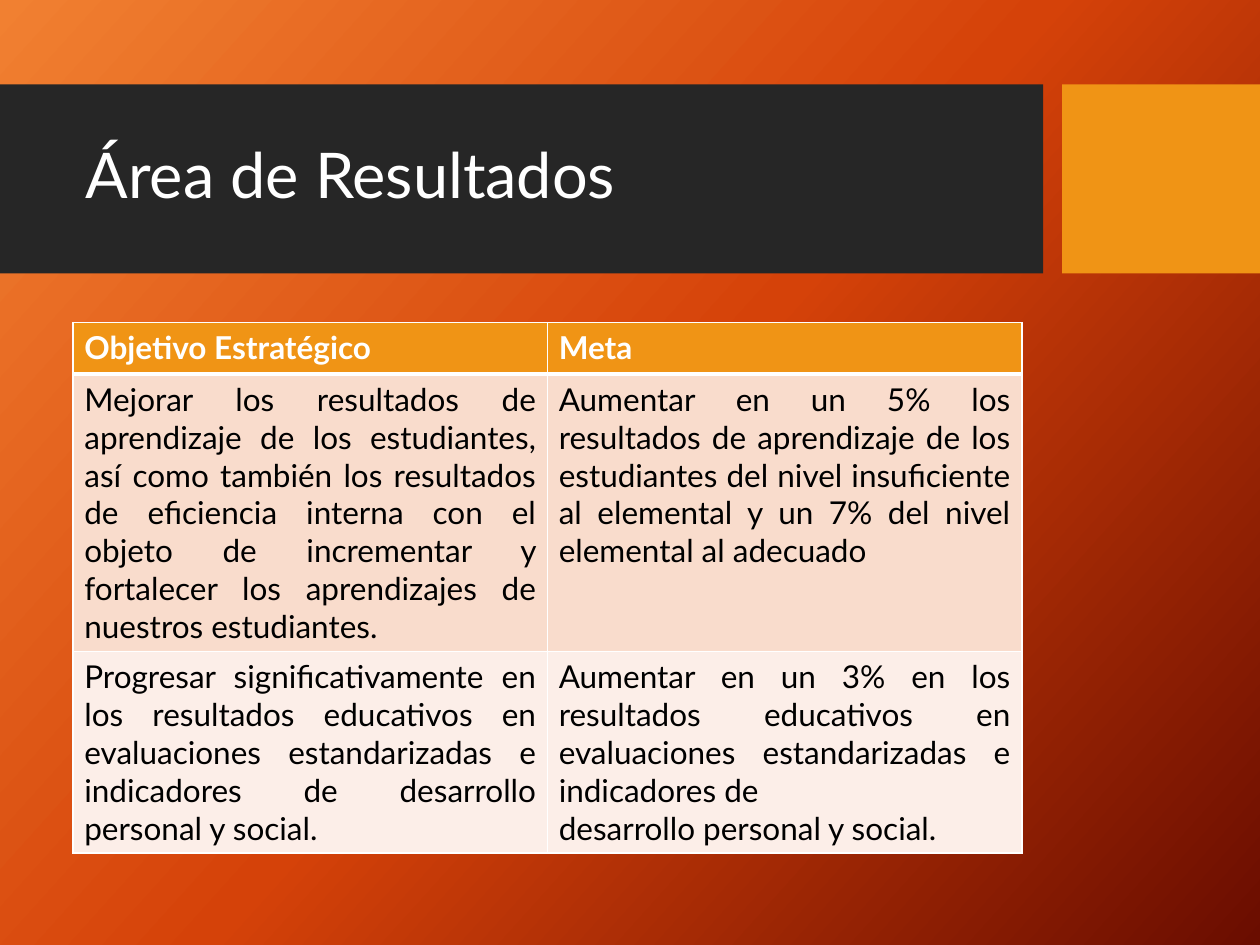
from copy import deepcopy

from lxml import etree
from pptx import Presentation
from pptx.dml.color import RGBColor
from pptx.enum.shapes import MSO_SHAPE
from pptx.enum.text import MSO_ANCHOR, PP_ALIGN
from pptx.oxml.ns import qn
from pptx.util import Inches, Pt

RECT = MSO_SHAPE.RECTANGLE
MIDDLE = MSO_ANCHOR.MIDDLE
LEFT, JUSTIFY = PP_ALIGN.LEFT, PP_ALIGN.JUSTIFY

FONT = "Lato"
WHITE = RGBColor(0xFF, 0xFF, 0xFF)
BLACK = RGBColor(0x00, 0x00, 0x00)
CHARCOAL = RGBColor(0x26, 0x26, 0x26)
AMBER = RGBColor(0xF0, 0x94, 0x15)
PEACH = RGBColor(0xF9, 0xDC, 0xCC)
PALE = RGBColor(0xFC, 0xEE, 0xE8)
BACKGROUND = [
    (0, RGBColor(0xF1, 0x80, 0x31)),
    (0.5, RGBColor(0xD5, 0x42, 0x09)),
    (1, RGBColor(0x6A, 0x0D, 0x00)),
]

ROWS = [
    ("Objetivo Estratégico", "Meta"),
    ("Mejorar los resultados de aprendizaje de los estudiantes, así como "
     "también los resultados de eficiencia interna con el objeto de "
     "incrementar y fortalecer los aprendizajes de nuestros estudiantes.",
     "Aumentar en un 5% los resultados de aprendizaje de los estudiantes del "
     "nivel insuficiente al elemental y un 7% del nivel elemental al adecuado "),
    ("Progresar significativamente en los resultados educativos en "
     "evaluaciones estandarizadas e indicadores de desarrollo personal y "
     "social.",
     "Aumentar en un 3% en los resultados educativos en evaluaciones "
     "estandarizadas e indicadores de\ndesarrollo personal y social."),
]
ROW_HEIGHTS = [0.41, 2.2, 1.6]
ROW_FILLS = [AMBER, PEACH, PALE]


def set_background(s):
    fill = s.background.fill
    fill.gradient()
    fill.gradient_angle = 360 - 42
    # A new gradient has two stops; add the third
    stops = next(s.element.iter(qn("a:gsLst")))
    stops.append(deepcopy(stops[-1]))
    for stop, (position, color) in zip(fill.gradient_stops, BACKGROUND):
        stop.position = position
        stop.color.rgb = color


def add_band(s, left, width, color):
    sp = s.shapes.add_shape(RECT, Inches(left), Inches(0.67),
                            Inches(width), Inches(1.5))
    sp.shadow.inherit = False
    sp.fill.solid()
    sp.fill.fore_color.rgb = color
    sp.line.fill.background()


def format_font(font, size, color, bold=False):
    font.name = FONT
    font.size = Pt(size)
    font.bold = bold
    font.color.rgb = color


def set_title(s, text):
    title = s.shapes.title
    title.left, title.top = Inches(0.58), Inches(0.82)
    title.width, title.height = Inches(7.54), Inches(1.18)
    tf = title.text_frame
    tf.text = text
    tf.vertical_anchor = MIDDLE
    p = tf.paragraphs[0]
    p.alignment = LEFT
    p.line_spacing = 0.9
    format_font(p.runs[0].font, 36, WHITE)
    # Bring the title in front of the bands
    title.element.getparent().append(title.element)


def set_borders(cell, widths):
    tc_pr = cell._tc.get_or_add_tcPr()
    for side, width in zip("LRTB", widths):
        ln = etree.SubElement(tc_pr, qn(f"a:ln{side}"), w=str(Pt(width)))
        fill = etree.SubElement(ln, qn("a:solidFill"))
        etree.SubElement(fill, qn("a:srgbClr"), val=str(WHITE))


def format_cell(cell, row, col, text):
    header = row == 0
    # The rule under the header is thicker
    set_borders(cell, (1, 1, 3 if row == 1 else 1, 3 if header else 1))
    cell.fill.solid()
    cell.fill.fore_color.rgb = ROW_FILLS[row]
    cell.margin_left = cell.margin_right = Inches(0.09)
    cell.margin_top = cell.margin_bottom = Inches(0.05)
    cell.text_frame.text = text
    for p in cell.text_frame.paragraphs:
        p.alignment = LEFT if header and col == 0 else JUSTIFY
        for r in p.runs:
            format_font(r.font, 18, WHITE if header else BLACK, header)


def add_goals_table(s):
    table = s.shapes.add_table(
        len(ROWS), len(ROWS[0]), Inches(0.58), Inches(2.56),
        Inches(7.53), Inches(sum(ROW_HEIGHTS))).table
    for row, texts in enumerate(ROWS):
        table.rows[row].height = Inches(ROW_HEIGHTS[row])
        for col, text in enumerate(texts):
            format_cell(table.cell(row, col), row, col, text)


def main():
    prs = Presentation()
    prs.slide_width, prs.slide_height = Inches(10), Inches(7.5)
    s = prs.slides.add_slide(prs.slide_layouts[5])
    set_background(s)
    # Title strip and its accent block
    add_band(s, 0, 8.28, CHARCOAL)
    add_band(s, 8.43, 1.57, AMBER)
    set_title(s, "Área de Resultados")
    # Objectives and goals
    add_goals_table(s)
    prs.save("out.pptx")


if __name__ == "__main__":
    main()
